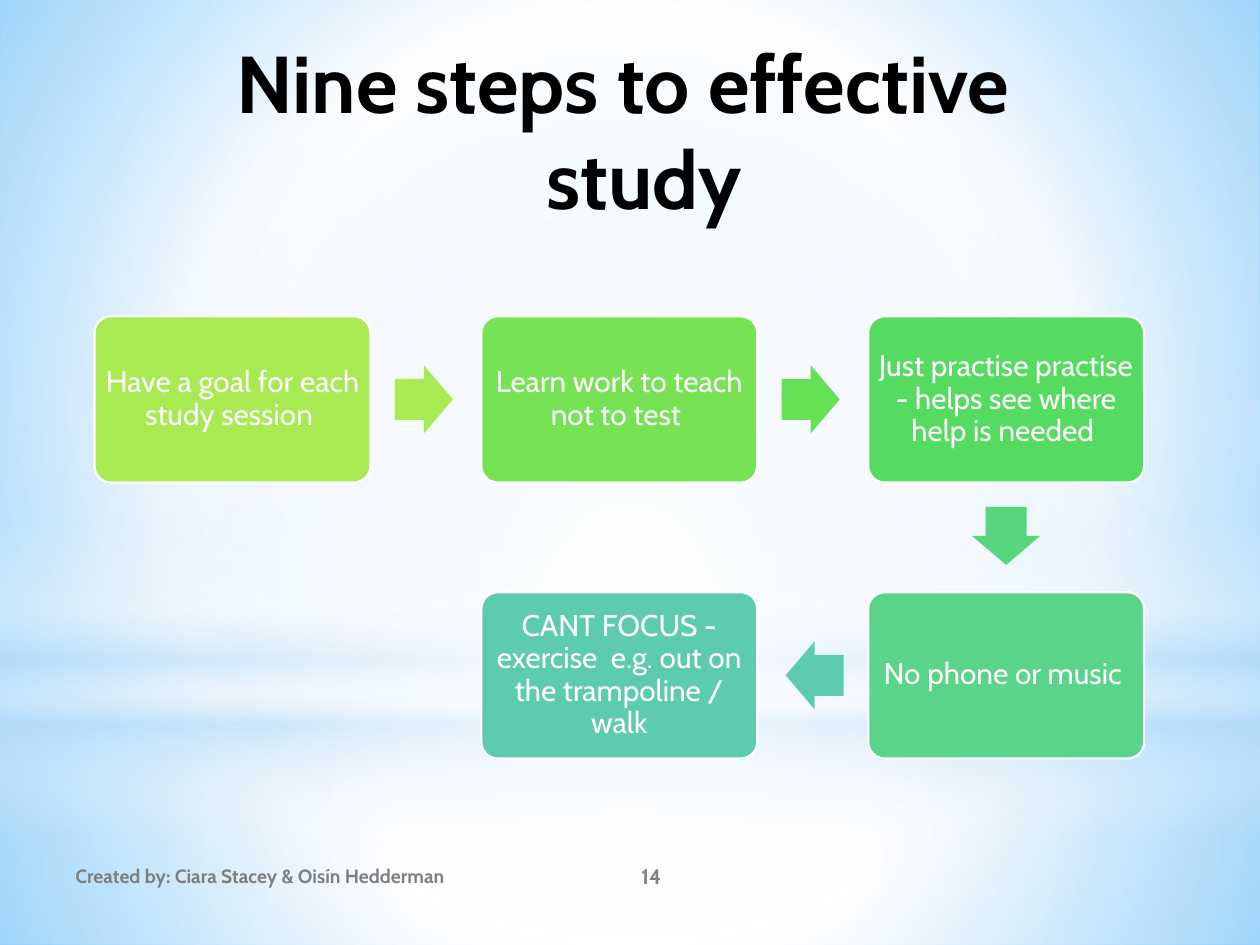
"""Build the slide 'Nine steps to effective study' as a flow of five steps."""
from lxml.etree import SubElement
from pptx import Presentation
from pptx.dml.color import RGBColor
from pptx.enum.shapes import MSO_SHAPE
from pptx.enum.text import MSO_ANCHOR, PP_ALIGN
from pptx.oxml.ns import qn
from pptx.util import Inches, Pt

WHITE = RGBColor(0xFF, 0xFF, 0xFF)
BLACK = RGBColor(0x00, 0x00, 0x00)
GREY = RGBColor(0x7F, 0x7F, 0x7F)
PALE_BLUE = RGBColor(0xB4, 0xDC, 0xFA)
SKY = RGBColor(0x99, 0xD4, 0xFE)
DEEP_SKY = RGBColor(0x54, 0xBD, 0xFF)
LIME = RGBColor(0xA7, 0xEA, 0x52)
LEAF = RGBColor(0x76, 0xE2, 0x54)
GRASS = RGBColor(0x66, 0xE0, 0x55)
GREEN = RGBColor(0x56, 0xDB, 0x61)
MINT = RGBColor(0x58, 0xD6, 0x7D)
JADE = RGBColor(0x59, 0xD4, 0x8A)
TEAL = RGBColor(0x5D, 0xCC, 0xAE)


def set_gradient(fill, element, stops, circular=True):
    fill.solid()
    solid = next(element.iter(qn("a:solidFill")))
    gradient = solid.makeelement(qn("a:gradFill"), {"rotWithShape": "1"})
    solid.getparent().replace(solid, gradient)
    stop_list = SubElement(gradient, qn("a:gsLst"))
    for position, color, opacity in stops:
        stop = SubElement(stop_list, qn("a:gs"), pos=str(position * 1000))
        tint = SubElement(stop, qn("a:srgbClr"), val=str(color))
        SubElement(tint, qn("a:alpha"), val=str(opacity * 1000))
    if circular:
        path = SubElement(gradient, qn("a:path"), path="circle")
        SubElement(path, qn("a:fillToRect"), l="50000", t="50000", r="50000", b="50000")
    else:
        SubElement(gradient, qn("a:lin"), ang="5400000", scaled="0")


def write(frame, text, size, color, bold=False, align=PP_ALIGN.CENTER,
          anchor=MSO_ANCHOR.MIDDLE):
    frame.word_wrap = True
    frame.vertical_anchor = anchor
    frame.text = text
    paragraph = frame.paragraphs[0]
    paragraph.alignment = align
    font = paragraph.runs[0].font
    font.name, font.size, font.bold = "Cabin", Pt(size), bold
    font.color.rgb = color
    return paragraph


deck = Presentation()
deck.slide_width, deck.slide_height = Inches(10), Inches(7.5)
slide = deck.slides.add_slide(deck.slide_layouts[5])
shapes = slide.shapes

background = slide.background
set_gradient(background.fill, slide.element,
             [(0, SKY, 100), (60, WHITE, 100), (100, DEEP_SKY, 100)])

glows = [
    (MSO_SHAPE.RECTANGLE, 5.58, 1.92, True,
     [(0, WHITE, 91), (37, WHITE, 76), (100, PALE_BLUE, 79)]),
    (MSO_SHAPE.RECTANGLE, 0, 5.58, True,
     [(0, WHITE, 89), (48, WHITE, 62), (100, PALE_BLUE, 79)]),
    (MSO_SHAPE.RECTANGLE, 4.12, 2.5, False,
     [(0, WHITE, 0), (29, WHITE, 30), (45, PALE_BLUE, 40),
      (55, WHITE, 26), (65, PALE_BLUE, 60), (100, WHITE, 0)]),
    (MSO_SHAPE.OVAL, 1.75, 5.58, True,
     [(0, WHITE, 100), (56, WHITE, 0), (100, WHITE, 0)]),
]
for outline, top, height, circular, stops in glows:
    glow = shapes.add_shape(outline, 0, Inches(top), deck.slide_width, Inches(height))
    glow.shadow.inherit = False
    glow.line.fill.background()
    set_gradient(glow.fill, glow.element, stops, circular)

title = shapes.title
title.left, title.top = Inches(1.38), Inches(0.21)
title.width, title.height = Inches(7.12), Inches(1.25)
heading = write(title.text_frame, "Nine steps to effective study", 46, BLACK,
                bold=True, anchor=MSO_ANCHOR.TOP)
heading_props = heading._p.get_or_add_pPr()
heading_props.set("marL", str(Inches(0.35)))
heading_props.set("indent", str(-Inches(0.35)))
title.element.getparent().append(title.element)

LEFT, TOP = 0.75, 2.51
COLUMN, ROW = 3.07, 2.19
BOX_WIDTH, BOX_HEIGHT = 2.19, 1.32
ARROW_WIDTH, ARROW_HEIGHT = 0.46, 0.54
ARROW_SHARE = 0.495

steps = [
    (0, 0, LIME, "Have a goal for each study session "),
    (1, 0, LEAF, "Learn work to teach not to test "),
    (2, 0, GREEN, "Just practise practise - helps see where help is needed "),
    (2, 1, JADE, "No phone or music "),
    (1, 1, TEAL, "CANT FOCUS - exercise  e.g. out on the trampoline / walk"),
]
for column, row, color, text in steps:
    box = shapes.add_shape(
        MSO_SHAPE.ROUNDED_RECTANGLE, Inches(LEFT + column * COLUMN),
        Inches(TOP + row * ROW), Inches(BOX_WIDTH), Inches(BOX_HEIGHT))
    box.adjustments[0] = 0.1
    box.shadow.inherit = False
    box.fill.solid()
    box.fill.fore_color.rgb = color
    box.line.color.rgb = WHITE
    box.line.width = Pt(1.25)
    frame = box.text_frame
    frame.margin_left = frame.margin_right = Inches(0.03)
    frame.margin_top = frame.margin_bottom = Inches(0.03)
    write(frame, text, 17, WHITE).line_spacing = 0.9

arrows = [(LIME, 0), (GRASS, 0), (MINT, 90), (TEAL, 180)]
for (color, angle), start, end in zip(arrows, steps, steps[1:]):
    column = start[0] + (end[0] - start[0]) * ARROW_SHARE
    row = start[1] + (end[1] - start[1]) * ARROW_SHARE
    arrow = shapes.add_shape(
        MSO_SHAPE.RIGHT_ARROW,
        Inches(LEFT + column * COLUMN + (BOX_WIDTH - ARROW_WIDTH) / 2),
        Inches(TOP + row * ROW + (BOX_HEIGHT - ARROW_HEIGHT) / 2),
        Inches(ARROW_WIDTH), Inches(ARROW_HEIGHT))
    arrow.adjustments[0], arrow.adjustments[1] = 0.6, 0.5
    arrow.rotation = angle
    arrow.shadow.inherit = False
    arrow.fill.solid()
    arrow.fill.fore_color.rgb = color
    arrow.line.fill.background()

footers = [
    (0.5, 3.67, "Created by: Ciara Stacey & Oisín Hedderman", 11, PP_ALIGN.LEFT),
    (4.17, 2, "14", 12, PP_ALIGN.CENTER),
]
for left, width, text, size, align in footers:
    footer = shapes.add_textbox(Inches(left), Inches(6.75), Inches(width), Inches(0.4))
    write(footer.text_frame, text, size, GREY, bold=True, align=align)

deck.save("out.pptx")
